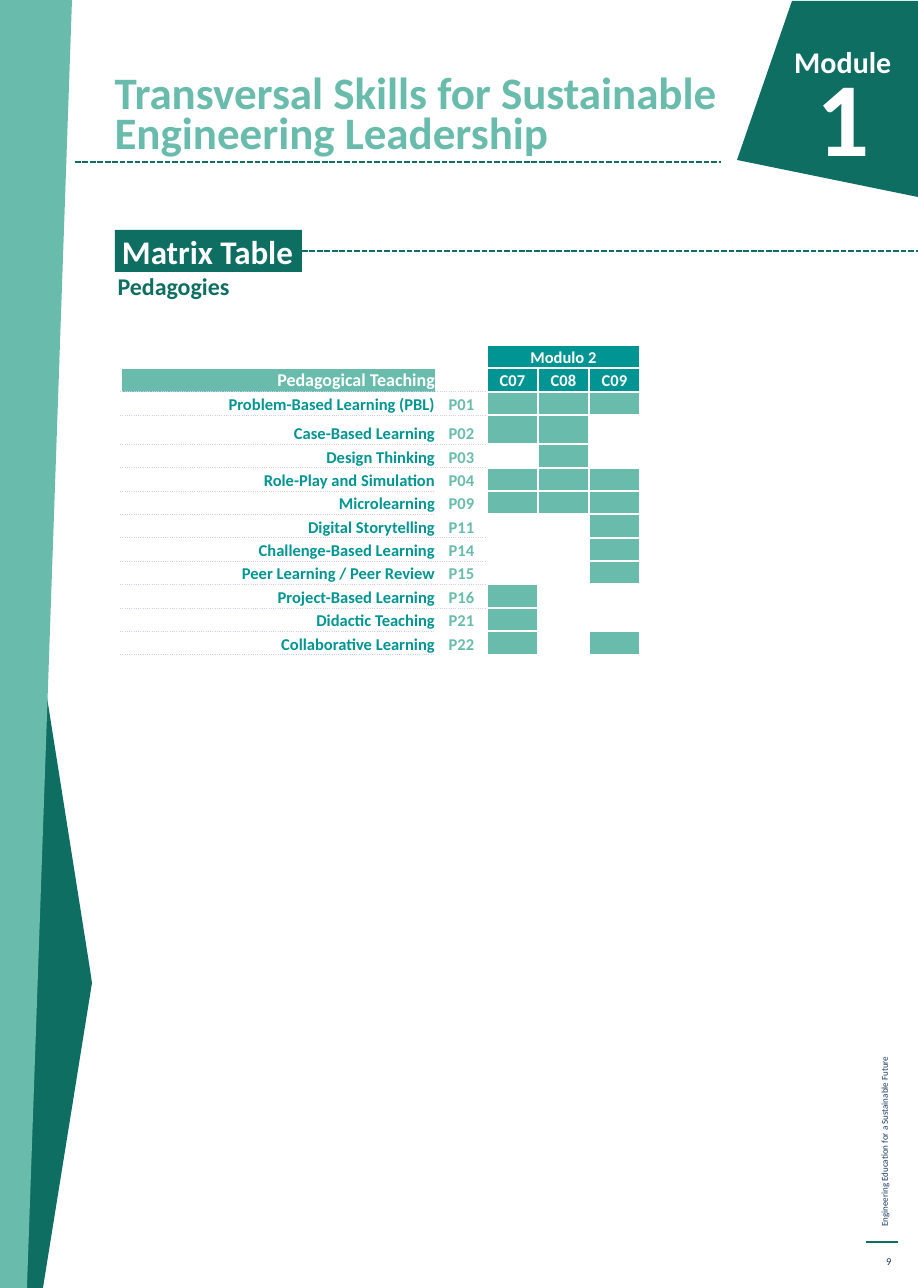
import dataclasses

import pptx
import pptx.dml.color
import pptx.enum.dml
import pptx.enum.shapes
import pptx.enum.text
import pptx.oxml
import pptx.oxml.ns
import pptx.util

SCALE = 914400 / 108
PAGE_W, PAGE_H = 918, 1288
NS = pptx.oxml.ns.nsdecls("a")
ALIGN = pptx.enum.text.PP_ALIGN
ANCHOR = pptx.enum.text.MSO_ANCHOR

COURSES = ("C07", "C08", "C09")
PEDAGOGIES = (
    ("Problem-Based Learning (PBL)", "P01", ("C07", "C08", "C09")),
    ("Case-Based Learning", "P02", ("C07", "C08")),
    ("Design Thinking", "P03", ("C08",)),
    ("Role-Play and Simulation", "P04", ("C07", "C08", "C09")),
    ("Microlearning", "P09", ("C07", "C08", "C09")),
    ("Digital Storytelling", "P11", ("C09",)),
    ("Challenge-Based Learning", "P14", ("C09",)),
    ("Peer Learning / Peer Review", "P15", ("C09",)),
    ("Project-Based Learning", "P16", ("C07",)),
    ("Didactic Teaching", "P21", ("C07",)),
    ("Collaborative Learning", "P22", ("C07", "C09")),
)
CODES_WITHOUT_RULE = ("P04", "P09", "P21", "P22")


@dataclasses.dataclass(frozen=True)
class Theme:
    font: str = "Calibri"
    dark: str = "0E6E61"
    light: str = "69BCAC"
    teal: str = "009592"
    navy: str = "1A3966"
    white: str = "FFFFFF"
    dotted: str = "CCCCFF"
    number: int = 70
    title: int = 30
    heading: int = 22
    module: int = 20
    subheading: int = 16
    table_head: int = 12
    table: int = 11
    page: int = 7
    footer: int = 6


def px(n):
    return round(n * SCALE)


def rgb(color):
    return pptx.dml.color.RGBColor.from_string(color)


class Page:
    """Draws styled elements on one slide."""

    def __init__(self, s, theme):
        self.s = s
        self.theme = theme

    def add_text(self, tf, text, size, color, bold=True, align=ALIGN.LEFT, spacing=None):
        p = tf.paragraphs[0]
        p.alignment = align
        if spacing:
            p.line_spacing = spacing
        r = p.add_run()
        r.text = text
        r.font.name = self.theme.font
        r.font.size = pptx.util.Pt(size)
        r.font.bold = bold
        r.font.color.rgb = rgb(color)

    def text(self, box, text, size, color, anchor=ANCHOR.TOP, rotation=0, **style):
        sp = self.s.shapes.add_textbox(*map(px, box))
        sp.rotation = rotation
        tf = sp.text_frame
        tf.word_wrap = True
        tf.vertical_anchor = anchor
        self.add_text(tf, text, size, color, **style)

    def paint(self, sp, color):
        sp.shadow.inherit = False
        sp.fill.solid()
        sp.fill.fore_color.rgb = rgb(color)
        sp.line.fill.background()

    def polygon(self, points, color):
        builder = self.s.shapes.build_freeform(*points[0], scale=SCALE)
        builder.add_line_segments(points[1:], close=True)
        self.paint(builder.convert_to_shape(), color)

    def label(self, box, text, size, color, inset):
        sp = self.s.shapes.add_shape(
            pptx.enum.shapes.MSO_SHAPE.RECTANGLE, *map(px, box))
        self.paint(sp, color)
        tf = sp.text_frame
        tf.word_wrap = False
        tf.vertical_anchor = ANCHOR.MIDDLE
        tf.margin_left = px(inset)
        tf.margin_right = tf.margin_top = tf.margin_bottom = 0
        self.add_text(tf, text, size, self.theme.white)
        return sp

    def rule(self, x1, x2, y, width, dashed=False, start=None):
        """Horizontal line, joined to the right side of start if given."""
        line = self.s.shapes.add_connector(
            pptx.enum.shapes.MSO_CONNECTOR.STRAIGHT, px(x1), px(y), px(x2), px(y))
        line.line.color.rgb = rgb(self.theme.dark)
        line.line.width = pptx.util.Pt(width)
        if dashed:
            line.line.dash_style = pptx.enum.dml.MSO_LINE.SQUARE_DOT
        line._element.spPr.append(pptx.oxml.parse_xml(f"<a:effectLst {NS}/>"))
        if start is not None:
            line.begin_connect(start, 3)

    def table(self, box, col_widths, row_heights):
        tb = self.s.shapes.add_table(
            len(row_heights), len(col_widths), *map(px, box)).table
        tb.first_row = tb.horz_banding = False
        for col, width in zip(tb.columns, col_widths):
            col.width = width
        for row, height in zip(tb.rows, row_heights):
            row.height = height
        return tb

    def cell(self, cell, text="", color=None, fill=None, size=None,
             align=ALIGN.CENTER, anchor=ANCHOR.BOTTOM, dots=""):
        """Style a cell; dots names the sides (T, B) with a dotted border."""
        t = self.theme
        size = size or t.table
        cell.margin_left = cell.margin_right = cell.margin_top = px(1)
        cell.margin_bottom = 0
        cell.vertical_anchor = anchor
        tcPr = cell._tc.get_or_add_tcPr()
        for side in "LRTB":
            width, line, dash = ((0.5, t.dotted, "sysDot") if side in dots
                                 else (1.5, t.white, "solid"))
            tcPr.append(pptx.oxml.parse_xml(
                f'<a:ln{side} {NS} w="{int(pptx.util.Pt(width))}"><a:solidFill>'
                f'<a:srgbClr val="{line}"/></a:solidFill>'
                f'<a:prstDash val="{dash}"/></a:ln{side}>'))
        if fill:
            cell.fill.solid()
            cell.fill.fore_color.rgb = rgb(fill)
        else:
            cell.fill.background()
        if text:
            self.add_text(cell.text_frame, text, size, color or t.white, align=align)
        else:
            end = cell.text_frame.paragraphs[0]._p.get_or_add_endParaRPr()
            end.set("sz", str(size * 100))


def draw_matrix(page):
    t = page.theme
    row = px(281) // 12
    heights = [row] * 3 + [px(29)] + [row] * 9
    tb = page.table((121, 345, 519, 310), [px(315)] + [px(51)] * 4, heights)

    tb.cell(0, 2).merge(tb.cell(0, 4))
    for j in range(5):
        page.cell(tb.cell(0, j), "Modulo 2" if j == 2 else "",
                  fill=t.teal if j > 1 else None)

    page.cell(tb.cell(1, 0), "Pedagogical Teaching", fill=t.light,
              size=t.table_head, align=ALIGN.RIGHT, dots="B")
    page.cell(tb.cell(1, 1), fill=t.white, dots="B")
    for j, course in enumerate(COURSES, 2):
        page.cell(tb.cell(1, j), course, fill=t.teal, anchor=ANCHOR.MIDDLE)

    above = "T"
    for i, (name, code, used_in) in enumerate(PEDAGOGIES, 2):
        below = "" if code in CODES_WITHOUT_RULE else "B"
        page.cell(tb.cell(i, 0), name, t.teal, align=ALIGN.RIGHT, dots="TB")
        page.cell(tb.cell(i, 1), code, t.light, dots=above + below)
        for j, course in enumerate(COURSES, 2):
            page.cell(tb.cell(i, j), fill=t.light if course in used_in else None)
        above = "T" if below else ""


def main():
    prs = pptx.Presentation()
    prs.slide_width, prs.slide_height = px(PAGE_W), px(PAGE_H)
    t = Theme()
    page = Page(prs.slides.add_slide(prs.slide_layouts[6]), t)

    page.text((642, 984, 485, 22), "Engineering Education for a Sustainable Future",
              t.footer, t.navy, rotation=270, bold=False)
    page.rule(866, 898, 1242, 0.75)
    page.text((866, 1246, 36, 31), "9", t.page, t.navy, anchor=ANCHOR.MIDDLE,
              bold=False, align=ALIGN.RIGHT)
    page.polygon([(43, PAGE_H), (25, PAGE_H), (25, 558), (90, 969), (92, 983)], t.dark)
    page.polygon([(0, 0), (72, 0), (27, PAGE_H), (0, PAGE_H)], t.light)

    draw_matrix(page)

    page.polygon([(PAGE_W, 1), (792, 1), (737, 160), (PAGE_W, 197)], t.dark)
    page.text((708, 38, 194, 153), "Module", t.module, t.white, align=ALIGN.RIGHT)
    page.text((686, 46, 194, 153), "1", t.number, t.white, align=ALIGN.RIGHT)

    page.text((104, 73, 640, 90),
              "Transversal Skills for Sustainable Engineering Leadership",
              t.title, t.light, spacing=pptx.util.Pt(26.8))
    page.rule(75, 721, 162, 1.25, dashed=True)

    heading = page.label((115, 230, 187, 42), "Matrix Table", t.heading, t.dark, 7)
    page.rule(302, PAGE_W, 251, 1.25, dashed=True, start=heading)
    page.text((107, 270, 467, 37), "Pedagogies", t.subheading, t.dark, spacing=0.9)

    prs.save("out.pptx")


if __name__ == "__main__":
    main()
